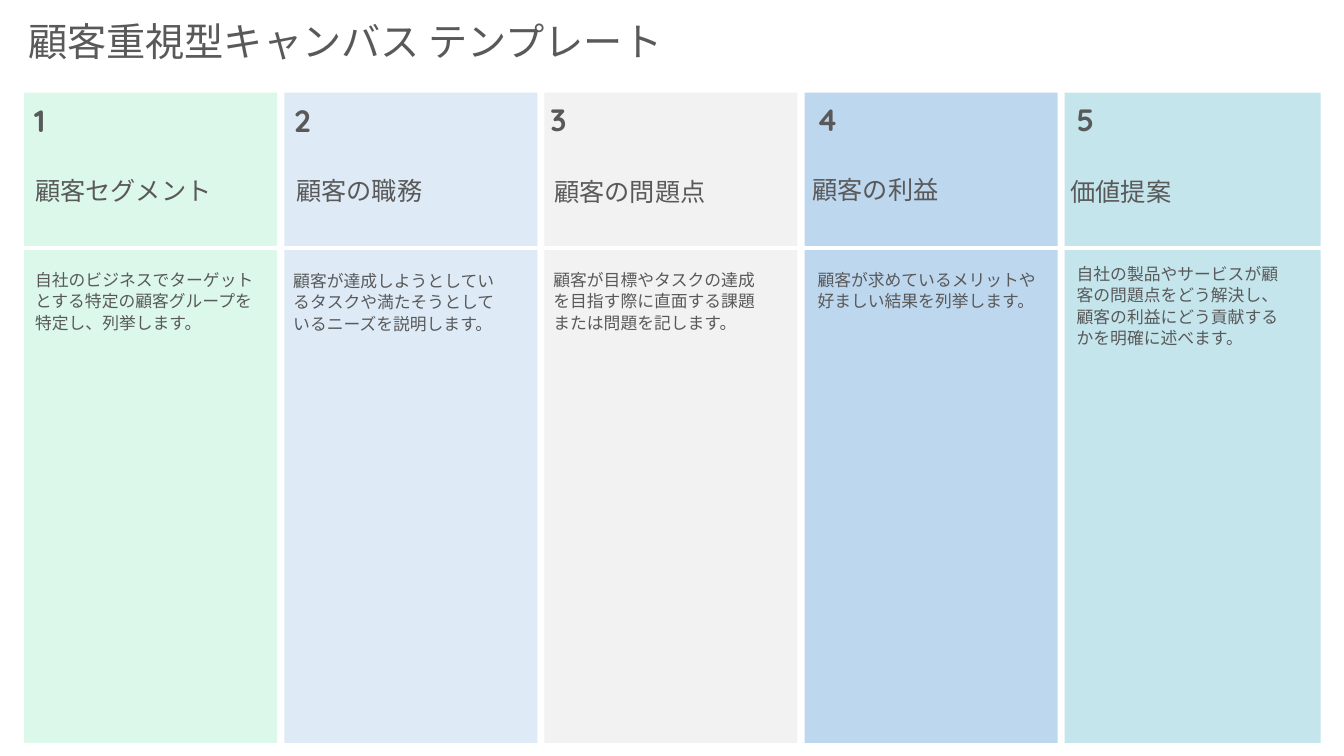
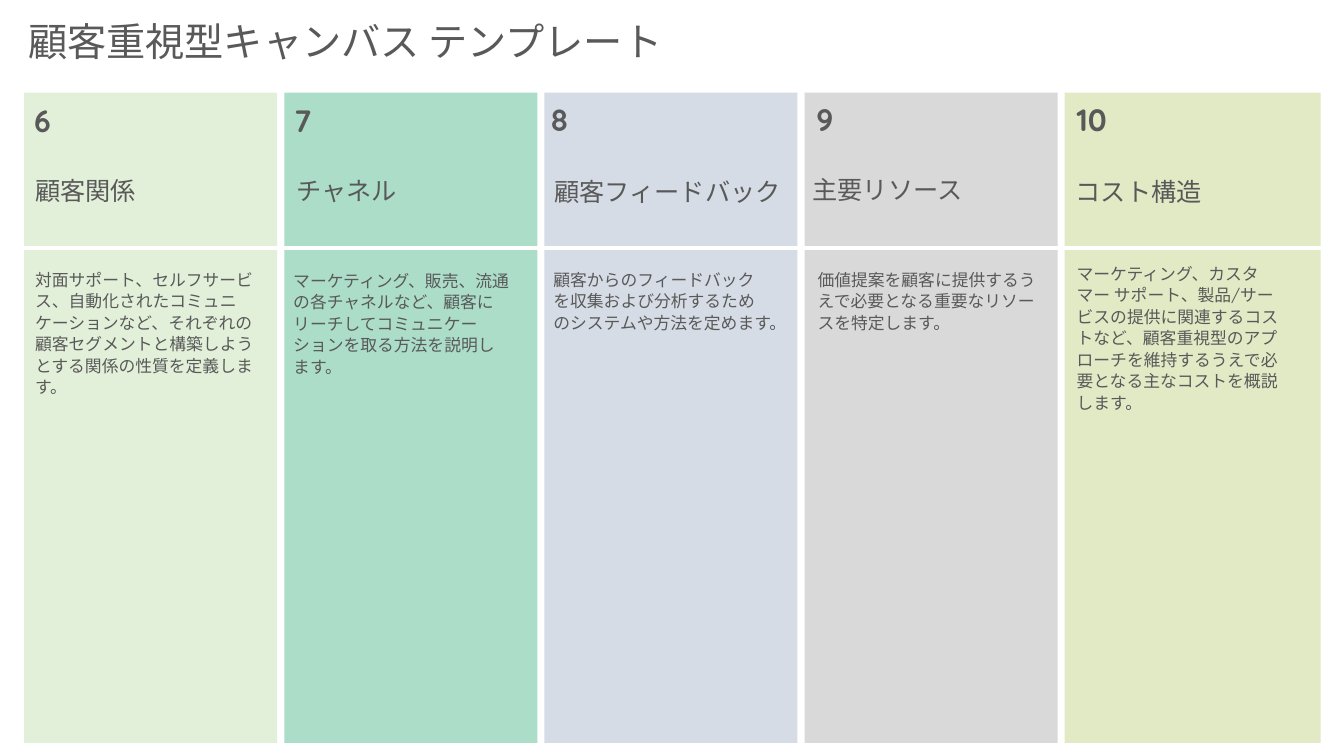
from dataclasses import dataclass

from lxml.etree import SubElement
from pptx import Presentation
from pptx.dml.color import RGBColor
from pptx.enum.lang import MSO_LANGUAGE_ID
from pptx.enum.shapes import MSO_CONNECTOR, MSO_SHAPE
from pptx.enum.text import MSO_ANCHOR, MSO_AUTO_SIZE, PP_ALIGN
from pptx.oxml.ns import qn
from pptx.util import Inches, Pt

TITLE = "顧客重視型キャンバス テンプレート"
FONT = "Quicksand"
INK = "595959"
WHITE = "FFFFFF"
PANEL_LEFT, PANEL_TOP, PANEL_STEP = 0.24, 0.92, 2.58
PANEL_WIDTH, PANEL_HEIGHT = 2.51, 6.45
LAST_PANEL_WIDTH = 2.54


@dataclass
class Column:
    number: tuple
    heading: tuple
    body: tuple


@dataclass
class Card:
    fill: str
    heading: str
    body: str
    heading_shift: float = 0


COLUMNS = [
    Column((0.24, 0.93), (0.25, 1.69), (0.25, 2.61, 2.38)),
    Column((2.82, 0.93), (2.84, 1.69), (2.81, 2.62, 2.35)),
    Column((5.36, 0.92), (5.4, 1.7), (5.39, 2.61, 2.35)),
    Column((8, 0.92), (7.96, 1.68), (8.01, 2.61, 2.38)),
    Column((10.58, 0.92), (10.52, 1.7), (10.58, 2.55, 2.25)),
]

CANVASES = [
    [
        Card("DCF8EB", "顧客セグメント",
             "自社のビジネスでターゲットとする特定の顧客グループを特定し、列挙します。"),
        Card("DEEBF7", "顧客の職務",
             "顧客が達成しようとしているタスクや満たそうとしているニーズを説明します。"),
        Card("F2F2F2", "顧客の問題点",
             "顧客が目標やタスクの達成を目指す際に直面する課題または問題を記します。"),
        Card("BDD7EE", "顧客の利益",
             "顧客が求めているメリットや好ましい結果を列挙します。"),
        Card("C5E5ED", "価値提案",
             "自社の製品やサービスが顧客の問題点をどう解決し、"
             "顧客の利益にどう貢献するかを明確に述べます。"),
    ],
    [
        Card("E2F0D9", "顧客関係",
             "対面サポート、セルフサービス、自動化されたコミュニケーションなど、"
             "それぞれの顧客セグメントと構築しようとする関係の性質を定義します。"),
        Card("ABDDC9", "チャネル",
             "マーケティング、販売、流通の各チャネルなど、"
             "顧客にリーチしてコミュニケーションを取る方法を説明します。"),
        Card("D6DCE5", "顧客フィードバック",
             "顧客からのフィードバックを収集および分析するためのシステムや方法を定めます。"),
        Card("D9D9D9", "主要リソース",
             "価値提案を顧客に提供するうえで必要となる重要なリソースを特定します。"),
        Card("E1E9C5", "コスト構造",
             "マーケティング、カスタマー サポート、製品/サービスの提供に関連するコストなど、"
             "顧客重視型のアプローチを維持するうえで必要となる主なコストを概説します。",
             heading_shift=0.05),
    ],
]


def color(value):
    return RGBColor.from_string(value)


def write(shape, text, size, bold=False, line_spacing=None, space_after=None, grow=False):
    frame = shape.text_frame
    frame.word_wrap = True
    frame.vertical_anchor = MSO_ANCHOR.TOP
    frame.auto_size = MSO_AUTO_SIZE.SHAPE_TO_FIT_TEXT if grow else MSO_AUTO_SIZE.NONE
    paragraph = frame.paragraphs[0]
    paragraph.alignment = PP_ALIGN.LEFT
    if line_spacing is not None:
        paragraph.line_spacing = line_spacing
    if space_after is not None:
        paragraph.space_after = Pt(space_after)
    run = paragraph.add_run()
    run.text = text
    run.font.name = FONT
    run.font.size = Pt(size)
    run.font.bold = bold
    run.font.color.rgb = color(INK)
    run.font.language_id = MSO_LANGUAGE_ID.JAPANESE


class CanvasDeck:
    def __init__(self):
        self.presentation = Presentation()
        self.presentation.slide_width = Inches(13.33)
        self.presentation.slide_height = Inches(7.5)
        self.slide = None

    def add_slide(self, title):
        layout = self.presentation.slide_layouts.get_by_name("Title Only")
        self.slide = self.presentation.slides.add_slide(layout)
        shape = self.slide.shapes.title
        shape.left, shape.top = Inches(0.18), Inches(0.12)
        shape.width, shape.height = Inches(12.95), Inches(0.57)
        write(shape, title, 28, grow=True)

    def add_panel(self, left, width, fill):
        shape = self.slide.shapes.add_shape(
            MSO_SHAPE.RECTANGLE, Inches(left), Inches(PANEL_TOP),
            Inches(width), Inches(PANEL_HEIGHT))
        shape.shadow.inherit = False
        shape.fill.solid()
        shape.fill.fore_color.rgb = color(fill)
        shape.line.fill.background()

    def add_divider(self):
        connector = self.slide.shapes.add_connector(
            MSO_CONNECTOR.STRAIGHT, Inches(PANEL_LEFT), Inches(2.46),
            Inches(13.2), Inches(2.46))
        connector.line.color.rgb = color(WHITE)
        connector.line.width = Pt(2.25)
        properties = connector._element.find(qn("p:spPr"))
        SubElement(properties, qn("a:effectLst"))

    def add_text(self, text, left, top, width, height, **style):
        box = self.slide.shapes.add_textbox(
            Inches(left), Inches(top), Inches(width), Inches(height))
        write(box, text, **style)

    def add_card_text(self, column, card, number):
        spaced = {"line_spacing": 1.07, "space_after": 8}
        left, top = column.heading
        self.add_text(card.heading, left + card.heading_shift, top, 2.5, 0.4,
                      size=18, grow=True)
        self.add_text(str(number), *column.number, 0.6, 0.64,
                      size=22, bold=True, **spaced)
        self.add_text(card.body, *column.body, 1.57, size=12, **spaced)

    def add_canvas(self, cards, first_number):
        self.add_slide(TITLE)
        for index, card in enumerate(cards):
            is_last = index == len(cards) - 1
            width = LAST_PANEL_WIDTH if is_last else PANEL_WIDTH
            self.add_panel(PANEL_LEFT + index * PANEL_STEP, width, card.fill)
        self.add_divider()
        for index, (column, card) in enumerate(zip(COLUMNS, cards)):
            self.add_card_text(column, card, first_number + index)


def main():
    deck = CanvasDeck()
    for index, cards in enumerate(CANVASES):
        deck.add_canvas(cards, index * len(COLUMNS) + 1)
    deck.presentation.save("out.pptx")


if __name__ == "__main__":
    main()
